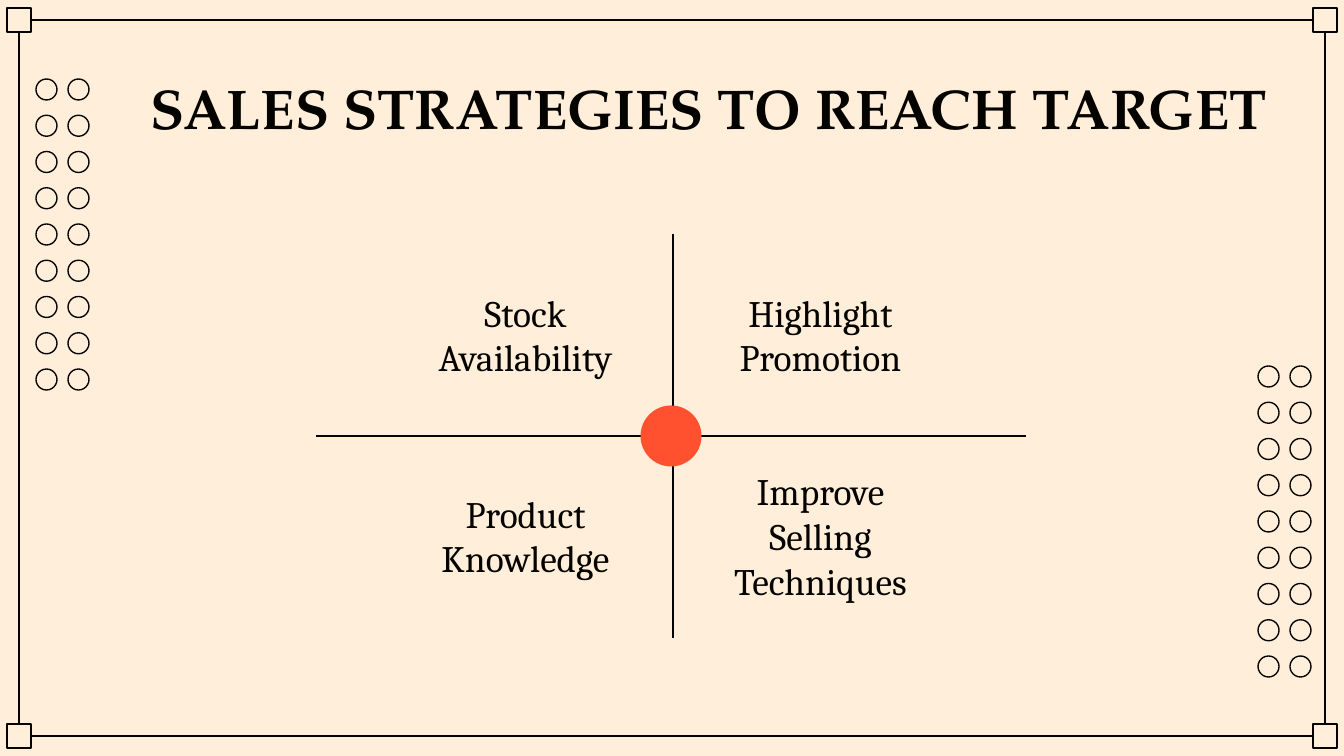
from itertools import product

from lxml.etree import SubElement
from pptx import Presentation
from pptx.dml.color import RGBColor
from pptx.enum.shapes import MSO_CONNECTOR, MSO_SHAPE
from pptx.enum.text import MSO_ANCHOR, MSO_AUTO_SIZE, PP_ALIGN
from pptx.oxml.ns import qn
from pptx.util import Emu, Pt

PX = 914400 / 134.4
COLORS = {"paper": "FFEFDA", "ink": "050300", "accent": "FF502F"}
TITLE_FONT = {"name": "TeX Gyre Pagella", "size": Pt(30), "bold": True}
LABEL_FONT = {"name": "Cambria", "size": Pt(20), "bold": False}
LABELS = ["Stock Availability", "Highlight Promotion",
          "Product Knowledge", "Improve Selling Techniques"]


def px(length):
    return Emu(round(length * PX))


def color(name):
    return RGBColor.from_string(COLORS[name])


def set_all(target, values):
    for name, value in values.items():
        setattr(target, name, value)


def draw_line(page, start, end):
    line = page.shapes.add_connector(
        MSO_CONNECTOR.STRAIGHT, *map(px, (*start, *end)))
    line.line.color.rgb = color("ink")
    line.line.width = Pt(0.75)
    SubElement(line._element.spPr, qn("a:effectLst"))
    return line


def draw_shape(page, kind, box, fill=None):
    """Draw a filled shape without outline, or an outlined one without fill."""
    shape = page.shapes.add_shape(kind, *map(px, box))
    shape.shadow.inherit = False
    if fill:
        shape.fill.solid()
        shape.fill.fore_color.rgb = color(fill)
        shape.line.fill.background()
    else:
        shape.fill.background()
        shape.line.color.rgb = color("ink")
        shape.line.width = Pt(0.75)
    return shape


def fill_placeholder(holder, box, text, font, anchor):
    """Place a placeholder and give it one centred, unbulleted paragraph."""
    set_all(holder, dict(zip(("left", "top", "width", "height"), map(px, box))))
    frame = holder.text_frame
    frame.text = text
    margins = dict.fromkeys(
        ("margin_left", "margin_top", "margin_right", "margin_bottom"), Pt(7.2))
    set_all(frame, {"word_wrap": True, "auto_size": MSO_AUTO_SIZE.NONE,
                    "vertical_anchor": anchor, **margins})
    para = frame.paragraphs[0]
    set_all(para, {"alignment": PP_ALIGN.CENTER, "space_before": Pt(0)})
    properties = para._p.get_or_add_pPr()
    properties.set("marL", "0")
    properties.set("indent", "0")
    SubElement(properties, qn("a:buNone"))
    span = para.runs[0]
    set_all(span.font, font)
    span.font.color.rgb = color("ink")


def add_frame(page, box):
    """Border whose four lines join small corner squares."""
    left, top, width, height = box
    size = 24
    corners = [draw_shape(page, MSO_SHAPE.RECTANGLE, (x, y, size, size))
               for y, x in product((top, top + height - size),
                                   (left, left + width - size))]
    for first, first_side, last, last_side in (
            (0, 3, 1, 1), (0, 2, 2, 0), (2, 3, 3, 1), (1, 2, 3, 0)):
        line = draw_line(page, (left, top), (left, top))
        line.begin_connect(corners[first], first_side)
        line.end_connect(corners[last], last_side)


def add_dots(page, box, rows=9, columns=2):
    left, top, width, height = box
    size = 21
    step_x = (width - size) / (columns - 1)
    step_y = (height - size) / (rows - 1)
    for row, column in product(range(rows), range(columns)):
        draw_shape(page, MSO_SHAPE.OVAL,
                   (left + column * step_x, top + row * step_y, size, size))


def add_quadrants(page, box, holders):
    """Crossed lines with a central disc and a label in each quarter."""
    left, top, width, height = box
    for holder, text, (row, column) in zip(
            holders, LABELS, product(range(2), range(2))):
        label_box = (left + 87 + column * 295, top + 64 + row * 201, 245, 73)
        fill_placeholder(holder, label_box, text, LABEL_FONT, MSO_ANCHOR.MIDDLE)
    middle_x, middle_y = left + width / 2, top + height / 2
    axis_x = middle_x + 2
    draw_line(page, (left, middle_y), (left + width, middle_y))
    draw_line(page, (axis_x, top), (axis_x, top + height))
    disc = 61
    draw_shape(page, MSO_SHAPE.OVAL,
               (middle_x - disc / 2, middle_y - disc / 2, disc, disc), "accent")


def main():
    deck = Presentation()
    deck.slide_width, deck.slide_height = px(1344), px(756)
    comparison_layout = deck.slide_layouts[4]
    page = deck.slides.add_slide(comparison_layout)
    page.background.fill.solid()
    page.background.fill.fore_color.rgb = color("paper")
    title, *holders = page.placeholders

    add_frame(page, (7, 8, 1330, 740))
    add_dots(page, (36, 79, 53, 311))
    add_dots(page, (1258, 366, 53, 311))
    fill_placeholder(title, (111, 60, 1196, 85),
                     "SALES STRATEGIES TO REACH TARGET", TITLE_FONT, MSO_ANCHOR.TOP)
    add_quadrants(page, (316, 234, 710, 404), holders)
    deck.save("out.pptx")


if __name__ == "__main__":
    main()
